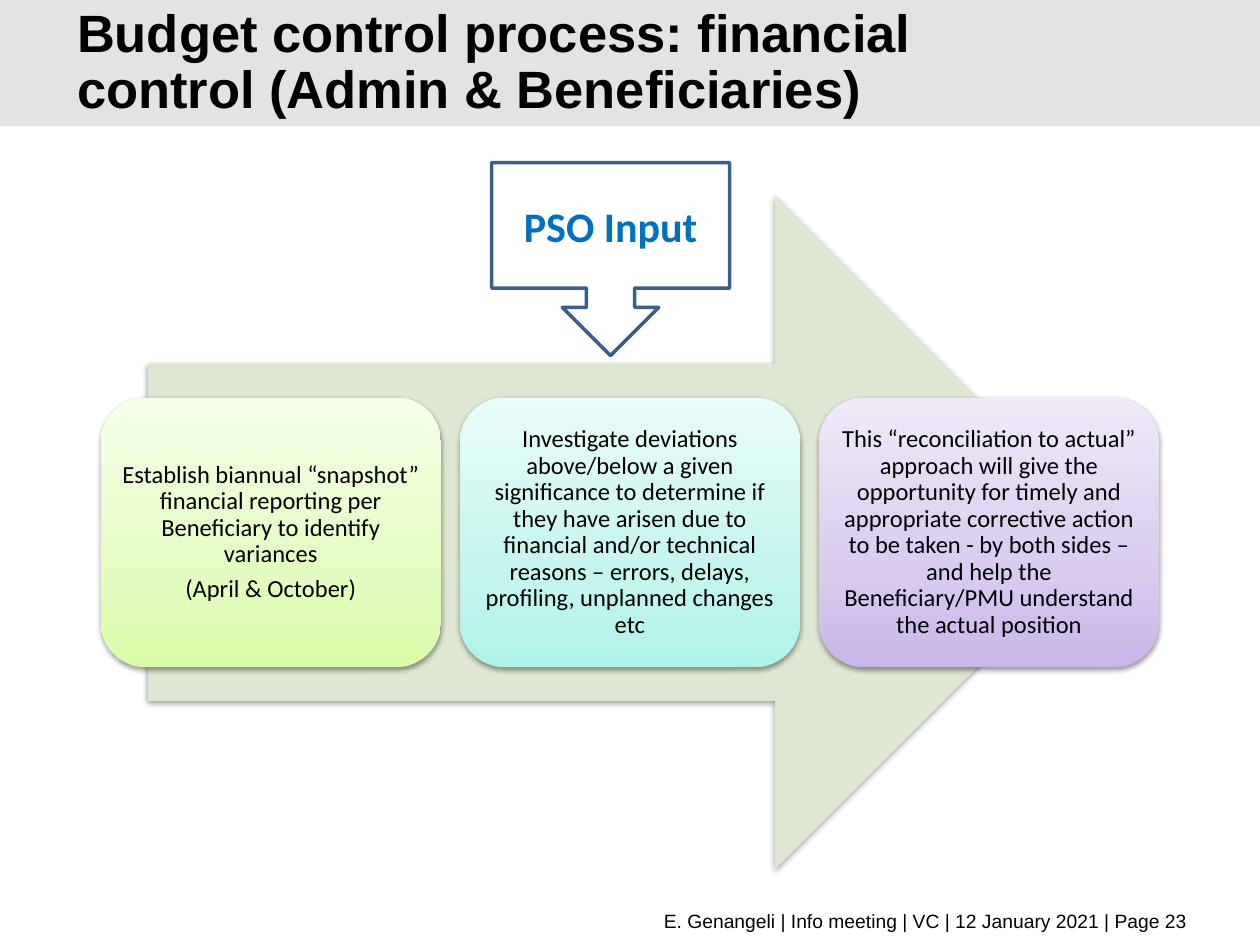
import lxml.etree
import pptx
import pptx.dml.color
import pptx.enum.shapes
import pptx.enum.text
import pptx.oxml.ns
import pptx.util

Cm = pptx.util.Cm
Pt = pptx.util.Pt
Color = pptx.dml.color.RGBColor
Shape = pptx.enum.shapes.MSO_SHAPE
Align = pptx.enum.text.PP_ALIGN
Anchor = pptx.enum.text.MSO_ANCHOR
qn = pptx.oxml.ns.qn

BLACK = Color(0x00, 0x00, 0x00)
BAND_GREY = Color(0xE3, 0xE3, 0xE3)
ARROW_GREEN = Color(0xDE, 0xE7, 0xD1)
CALLOUT_LINE = Color(0x3A, 0x5F, 0x8C)
CALLOUT_TEXT = Color(0x00, 0x70, 0xC0)
LIME = Color(0xDA, 0xFD, 0xA7), Color(0xE4, 0xFC, 0xC2), Color(0xF5, 0xFF, 0xE7)
AQUA = Color(0xAE, 0xF3, 0xE9), Color(0xC6, 0xF5, 0xEE), Color(0xE8, 0xFC, 0xF9)
VIOLET = Color(0xC9, 0xB5, 0xE8), Color(0xD8, 0xCB, 0xEE), Color(0xF0, 0xEA, 0xF9)

STEPS = [
    (LIME, ["Establish biannual “snapshot” financial reporting per Beneficiary to identify variances",
            "(April & October)"]),
    (AQUA, ["Investigate deviations above/below a given significance to determine if they have "
            "arisen due to financial and/or technical reasons – errors, delays, profiling, "
            "unplanned changes etc"]),
    (VIOLET, ["This “reconciliation to actual” approach will give the opportunity for timely and "
              "appropriate corrective action to be taken - by both sides – and help the "
              "Beneficiary/PMU understand the actual position"]),
]


def add_plain_shape(page, kind, box):
    """Add a preset shape without line, fill or shadow."""
    shape = page.shapes.add_shape(kind, *box)
    shape.shadow.inherit = False
    shape.fill.background()
    shape.line.fill.background()
    return shape


def add_element(parent, tag, **attributes):
    return lxml.etree.SubElement(parent, qn(tag), attributes)


def add_soft_shadow(shape):
    effects = shape.element.spPr.find(qn("a:effectLst"))
    shadow = add_element(effects, "a:outerShdw", blurRad=str(Pt(3.1)), dist=str(Pt(1.6)),
                         dir="5400000", rotWithShape="0")
    color = add_element(shadow, "a:srgbClr", val=str(BLACK))
    add_element(color, "a:alpha", val="38000")


def fill_upwards(shape, colors):
    """Fill with a three-colour gradient that runs from bottom to top."""
    shape.fill.gradient()
    shape.fill.gradient_angle = 90
    stops = shape.element.spPr.find(qn("a:gradFill")).find(qn("a:gsLst"))
    for stop in list(stops):
        stops.remove(stop)
    for percent, color in zip((0, 35, 100), colors):
        stop = add_element(stops, "a:gs", pos=str(percent * 1000))
        add_element(stop, "a:srgbClr", val=str(color))


def write(shape, lines, size, name="Calibri", color=BLACK, bold=False, align=Align.CENTER):
    frame = shape.text_frame
    frame.word_wrap = True
    frame.vertical_anchor = Anchor.MIDDLE
    frame.text = "\n".join(lines)
    for para in frame.paragraphs:
        para.alignment = align
        para.font.size = Pt(size)
        para.font.name = name
        para.font.bold = bold
        para.font.color.rgb = color
    return frame


def add_header(page, left, top, width, height):
    band = add_plain_shape(page, Shape.RECTANGLE, (left, top, width, height))
    band.fill.solid()
    band.fill.fore_color.rgb = BAND_GREY
    title = page.shapes.title
    band.element.addnext(title.element)
    title.left, title.top = left + Cm(1.3), top + Cm(0.64)
    title.width, title.height = Cm(20.96), height - 2 * Cm(0.64)
    frame = write(title, ["Budget control process: financial control (Admin & Beneficiaries)"],
                  30, "Arial", bold=True, align=Align.LEFT)
    frame.auto_size = pptx.enum.text.MSO_AUTO_SIZE.NONE
    frame.paragraphs[0].line_spacing = Pt(32)


def add_step(page, box, colors, lines):
    card = add_plain_shape(page, Shape.ROUNDED_RECTANGLE, box)
    fill_upwards(card, colors)
    add_soft_shadow(card)
    frame = write(card, lines, 14)
    frame.margin_left = frame.margin_right = Cm(0.15)
    frame.margin_top = frame.margin_bottom = Cm(0.15)
    for para in frame.paragraphs:
        para.line_spacing = 0.9
        para.space_after = Pt(4.9)


def add_process(page, left, top, width, height):
    """Place the big arrow and, across its middle, the row of steps."""
    inset, gap = Cm(0.95), Cm(0.38)
    arrow = add_plain_shape(page, Shape.RIGHT_ARROW,
                            (left + inset, top, width - 2 * inset, height))
    arrow.fill.solid()
    arrow.fill.fore_color.rgb = ARROW_GREEN
    add_soft_shadow(arrow)
    card_width = (width - gap * (len(STEPS) - 1)) // len(STEPS)
    card_height = int(height * 0.4)
    card_top = top + (height - card_height) // 2
    for index, (colors, lines) in enumerate(STEPS):
        card_left = left + index * (card_width + gap)
        add_step(page, (card_left, card_top, card_width, card_height), colors, lines)


def add_footer(page, *box):
    footer = page.shapes.add_textbox(*box)
    write(footer, ["E. Genangeli | Info meeting | VC | 12 January 2021 | Page 23"],
          11, "Arial", align=Align.RIGHT)


def add_input_callout(page, *box):
    callout = add_plain_shape(page, Shape.DOWN_ARROW_CALLOUT, box)
    callout.line.color.rgb = CALLOUT_LINE
    callout.line.width = Pt(2)
    write(callout, ["PSO Input"], 24, color=CALLOUT_TEXT, bold=True)


def main():
    deck = pptx.Presentation()
    deck.slide_width, deck.slide_height = Cm(25.4), Cm(19.05)
    page = deck.slides.add_slide(deck.slide_layouts.get_by_name("Title Only"))
    add_header(page, 0, 0, deck.slide_width, Cm(2.54))
    add_process(page, Cm(2.03), Cm(3.94), Cm(21.34), Cm(13.59))
    add_footer(page, Cm(1.3), Cm(18.19), Cm(22.89), Cm(0.74))
    add_input_callout(page, Cm(9.91), Cm(3.28), Cm(4.8), Cm(3.89))
    deck.save("out.pptx")


if __name__ == "__main__":
    main()
